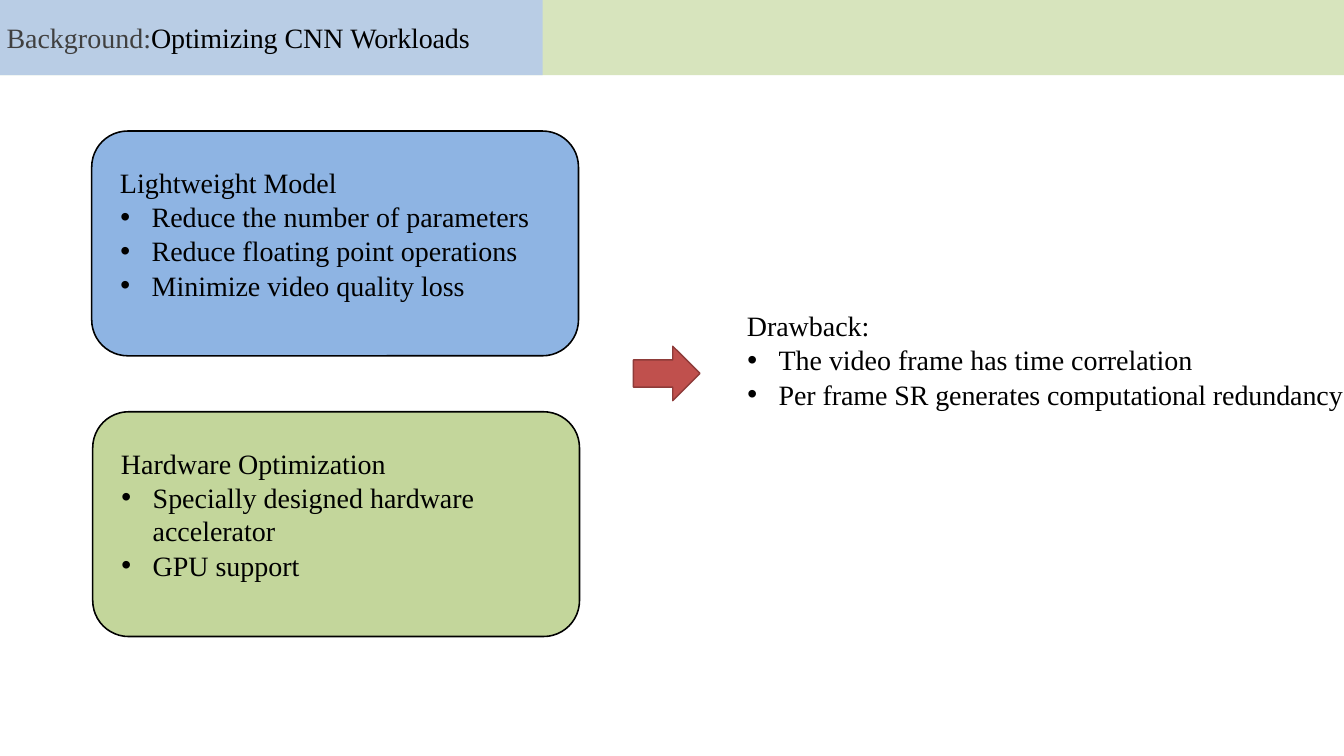
import pptx
import pptx.dml.color
import pptx.enum.shapes
import pptx.enum.text
import pptx.oxml.ns
import pptx.util
from lxml import etree

FONT = "Times New Roman"
BLACK = "000000"
SHAPES = pptx.enum.shapes.MSO_SHAPE
WIDTH, HEIGHT = 26.67, 15

# Content: title parts as (text, colour, letter spacing in hundredths of a point)
TITLE = [("Background:", "404040", 0),
         ("Optimizing CNN ", BLACK, -10),
         ("Workloads", BLACK, -20)]
CARDS = [
    ("Lightweight Model", "8EB4E3",
     ["Reduce the number of parameters",
      "Reduce floating point operations",
      "Minimize video quality loss"]),
    ("Hardware Optimization", "C3D69B",
     ["Specially designed hardware accelerator", "GPU support"]),
]
DRAWBACK = ("Drawback:",
            ["The video frame has time correlation",
             "Per frame SR generates computational redundancy"])

# Layout in inches
BAND_HEIGHT, BAND_SPLIT = 1.49, 10.77
CARD_LEFT, CARD_TOP, CARD_WIDTH, CARD_HEIGHT = 1.82, 2.6, 9.66, 4.46
CARD_PITCH_X, CARD_PITCH_Y = 0.02, 5.57
TEXT_OFFSET_X, TEXT_OFFSET_Y = 0.33, 0.67


def color(value):
    return pptx.dml.color.RGBColor.from_string(value)


def place(shape, left, top, width, height):
    shape.left, shape.top, shape.width, shape.height = (
        pptx.util.Inches(length) for length in (left, top, width, height))


def add_block(slide, kind, at, fill, line=None, line_width=0):
    block = slide.shapes.add_shape(kind, *(pptx.util.Inches(n) for n in at))
    block.shadow.inherit = False
    block.fill.solid()
    block.fill.fore_color.rgb = color(fill)
    if line:
        block.line.color.rgb = color(line)
        block.line.width = pptx.util.Pt(line_width)
    else:
        block.line.fill.background()
    return block


def format_span(span, value=BLACK, spacing=0):
    span.font.size = pptx.util.Pt(40)
    span.font.name = FONT
    span.font.bold = False
    span.font.color.rgb = color(value)
    if spacing:
        span.font._element.set("spc", str(spacing))


def prepare(slide, box, at):
    """Place a placeholder in front of the shapes, with plain top-anchored text."""
    slide.shapes._spTree.append(box._element)
    place(box, *at)
    frame = box.text_frame
    frame.word_wrap = True
    frame.auto_size = pptx.enum.text.MSO_AUTO_SIZE.NONE
    frame.vertical_anchor = pptx.enum.text.MSO_ANCHOR.TOP
    return frame


def set_indent(para, margin, indent, bullet=None):
    props = para._p.get_or_add_pPr()
    props.set("marL", str(pptx.util.Inches(margin)))
    props.set("indent", str(pptx.util.Inches(indent)))
    if bullet:
        font = etree.SubElement(props, pptx.oxml.ns.qn("a:buFont"))
        font.set("typeface", "Arial")
        mark = etree.SubElement(props, pptx.oxml.ns.qn("a:buChar"))
        mark.set("char", bullet)
    else:
        etree.SubElement(props, pptx.oxml.ns.qn("a:buNone"))


def fill_list(slide, box, at, heading, items, last_spacing=0):
    frame = prepare(slide, box, at)
    frame.margin_left = frame.margin_right = frame.margin_bottom = 0
    frame.margin_top = pptx.util.Inches(0.01)
    frame.text = "\n".join([heading] + items)
    for index, para in enumerate(frame.paragraphs):
        para.alignment = pptx.enum.text.PP_ALIGN.LEFT
        para.space_before = pptx.util.Pt(1 if index else 0)
        if index:
            set_indent(para, 0.86, -0.62, "•")
        else:
            set_indent(para, 0.23, 0)
        spacing = last_spacing if index == len(items) else 0
        format_span(para.runs[0], spacing=spacing)


def main():
    deck = pptx.Presentation()
    deck.slide_width = pptx.util.Inches(WIDTH)
    deck.slide_height = pptx.util.Inches(HEIGHT)
    slide = deck.slides.add_slide(deck.slide_layouts.get_by_name("Comparison"))
    first, second, third, spare = list(slide.placeholders)[1:5]
    spare._element.getparent().remove(spare._element)

    # Header band and title
    add_block(slide, SHAPES.RECTANGLE, (0, 0, WIDTH, BAND_HEIGHT), "D7E4BD")
    add_block(slide, SHAPES.RECTANGLE, (0, 0, BAND_SPLIT, BAND_HEIGHT), "B9CDE5")
    frame = prepare(slide, slide.shapes.title, (0.03, 0.35, 11.47, 0.77))
    para = frame.paragraphs[0]
    para.alignment = pptx.enum.text.PP_ALIGN.LEFT
    for text, value, spacing in TITLE:
        span = para.add_run()
        span.text = text
        format_span(span, value, spacing)

    # Approach cards
    for row, (box, (heading, fill, items)) in enumerate(zip((first, second), CARDS)):
        left = CARD_LEFT + row * CARD_PITCH_X
        top = CARD_TOP + row * CARD_PITCH_Y
        card = add_block(slide, SHAPES.ROUNDED_RECTANGLE,
                         (left, top, CARD_WIDTH, CARD_HEIGHT), fill, BLACK, 2.25)
        card.adjustments[0] = 0.16
        fill_list(slide, box,
                  (left + TEXT_OFFSET_X, top + TEXT_OFFSET_Y,
                   CARD_WIDTH - TEXT_OFFSET_X, CARD_HEIGHT - TEXT_OFFSET_Y),
                  heading, items)

    # Arrow to the drawback
    add_block(slide, SHAPES.RIGHT_ARROW, (12.57, 6.87, 1.32, 1.08),
              "C0504D", "8E3B39", 2)
    fill_list(slide, third, (14.59, 6.11, 12.08, 2.06), *DRAWBACK, last_spacing=-10)

    deck.save("out.pptx")


if __name__ == "__main__":
    main()
